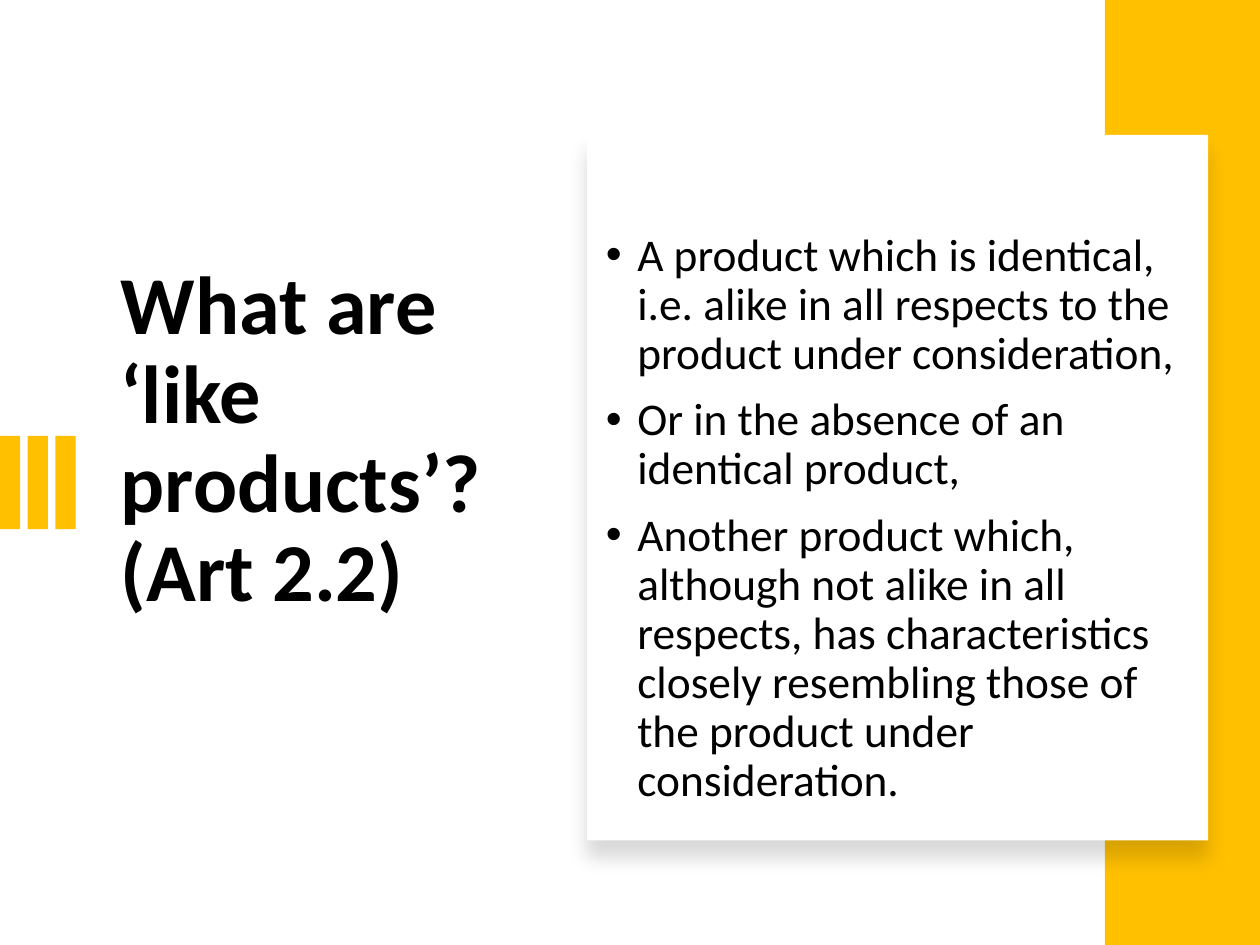
from dataclasses import dataclass

from lxml import etree
from pptx import Presentation
from pptx.dml.color import RGBColor
from pptx.enum.shapes import MSO_SHAPE
from pptx.enum.text import MSO_ANCHOR
from pptx.oxml.ns import qn
from pptx.shapes.autoshape import Shape
from pptx.slide import Slide
from pptx.text.text import TextFrame, _Paragraph
from pptx.util import Inches, Pt

RECTANGLE = MSO_SHAPE.RECTANGLE
MIDDLE = MSO_ANCHOR.MIDDLE


@dataclass(frozen=True)
class Theme:
    accent: RGBColor = RGBColor(0xFF, 0xC0, 0x00)
    panel: RGBColor = RGBColor(0xFF, 0xFF, 0xFF)
    text: RGBColor = RGBColor(0x00, 0x00, 0x00)
    font: str = "Calibri"
    title_size: float = 47
    body_size: float = 25.9
    line_spacing: float = 0.9


@dataclass(frozen=True)
class Box:
    left: float
    top: float
    width: float
    height: float

    def lengths(self) -> tuple[Inches, Inches, Inches, Inches]:
        return Inches(self.left), Inches(self.top), Inches(self.width), Inches(self.height)


THEME = Theme()
BAR_COUNT = 3
BAR_PITCH = 0.22
BARS = [Box(index * BAR_PITCH, 3.46, 0.16, 0.74) for index in range(BAR_COUNT)]
SIDE_BAND = Box(8.77, 0, 1.23, 7.5)
PANEL = Box(4.66, 1.07, 4.93, 5.6)
TITLE = Box(0.86, 1.46, 3.19, 4.79)
BODY = Box(4.71, 1.8, 4.85, 4.79)
TITLE_LINES = ["What are ‘like products’?", "(Art 2.2)"]
BULLETS = [
    "A product which is identical, i.e. alike in all respects to the product under consideration,",
    "Or in the absence of an identical product,",
    "Another product which, although not alike in all respects, has characteristics "
    "closely resembling those of the product under consideration.",
]


def add_rectangle(slide: Slide, box: Box, color: RGBColor) -> Shape:
    shape = slide.shapes.add_shape(RECTANGLE, *box.lengths())
    shape.shadow.inherit = False
    shape.fill.solid()
    shape.fill.fore_color.rgb = color
    shape.line.fill.background()
    return shape


def add_soft_shadow(shape: Shape) -> None:
    effects = shape._element.spPr.find(qn("a:effectLst"))
    shadow = etree.SubElement(
        effects, qn("a:outerShdw"), blurRad=str(Pt(11)), dist=str(Pt(10)),
        dir=str(90 * 60000), algn="t", rotWithShape="0",
    )
    color = etree.SubElement(shadow, qn("a:srgbClr"), val=str(THEME.text))
    etree.SubElement(color, qn("a:alpha"), val="15000")


def add_text_frame(slide: Slide, box: Box, bottom_margin: float) -> TextFrame:
    frame = slide.shapes.add_textbox(*box.lengths()).text_frame
    frame.word_wrap = True
    frame.vertical_anchor = MIDDLE
    frame.margin_bottom = Inches(bottom_margin)
    return frame


def add_run(paragraph: _Paragraph, text: str, size: float, bold: bool = False) -> None:
    run = paragraph.add_run()
    run.text = text
    run.font.name = THEME.font
    run.font.size = Pt(size)
    run.font.bold = bold
    run.font.color.rgb = THEME.text


def add_title(slide: Slide) -> None:
    paragraph = add_text_frame(slide, TITLE, 0.75).paragraphs[0]
    paragraph.line_spacing = THEME.line_spacing
    for index, line in enumerate(TITLE_LINES):
        if index:
            paragraph.add_line_break()
        add_run(paragraph, line, THEME.title_size, bold=True)


def set_bullet(paragraph: _Paragraph) -> None:
    properties = paragraph._p.get_or_add_pPr()
    properties.set("marL", str(Inches(0.25)))
    properties.set("indent", str(Inches(-0.25)))
    etree.SubElement(properties, qn("a:buFont"), typeface="Arial")
    etree.SubElement(properties, qn("a:buChar"), char="•")


def add_body(slide: Slide) -> None:
    frame = add_text_frame(slide, BODY, 0.2)
    for index, text in enumerate(BULLETS):
        paragraph = frame.add_paragraph() if index else frame.paragraphs[0]
        paragraph.line_spacing = THEME.line_spacing
        paragraph.space_before = Pt(10)
        set_bullet(paragraph)
        add_run(paragraph, text, THEME.body_size)


def main() -> None:
    """Build the slide on like products and save it."""
    presentation = Presentation()
    presentation.slide_width = Inches(10)
    presentation.slide_height = Inches(7.5)
    slide = presentation.slides.add_slide(presentation.slide_layouts[6])
    add_title(slide)
    for box in [*BARS, SIDE_BAND]:
        add_rectangle(slide, box, THEME.accent)
    add_soft_shadow(add_rectangle(slide, PANEL, THEME.panel))
    add_body(slide)
    presentation.save("out.pptx")


if __name__ == "__main__":
    main()
